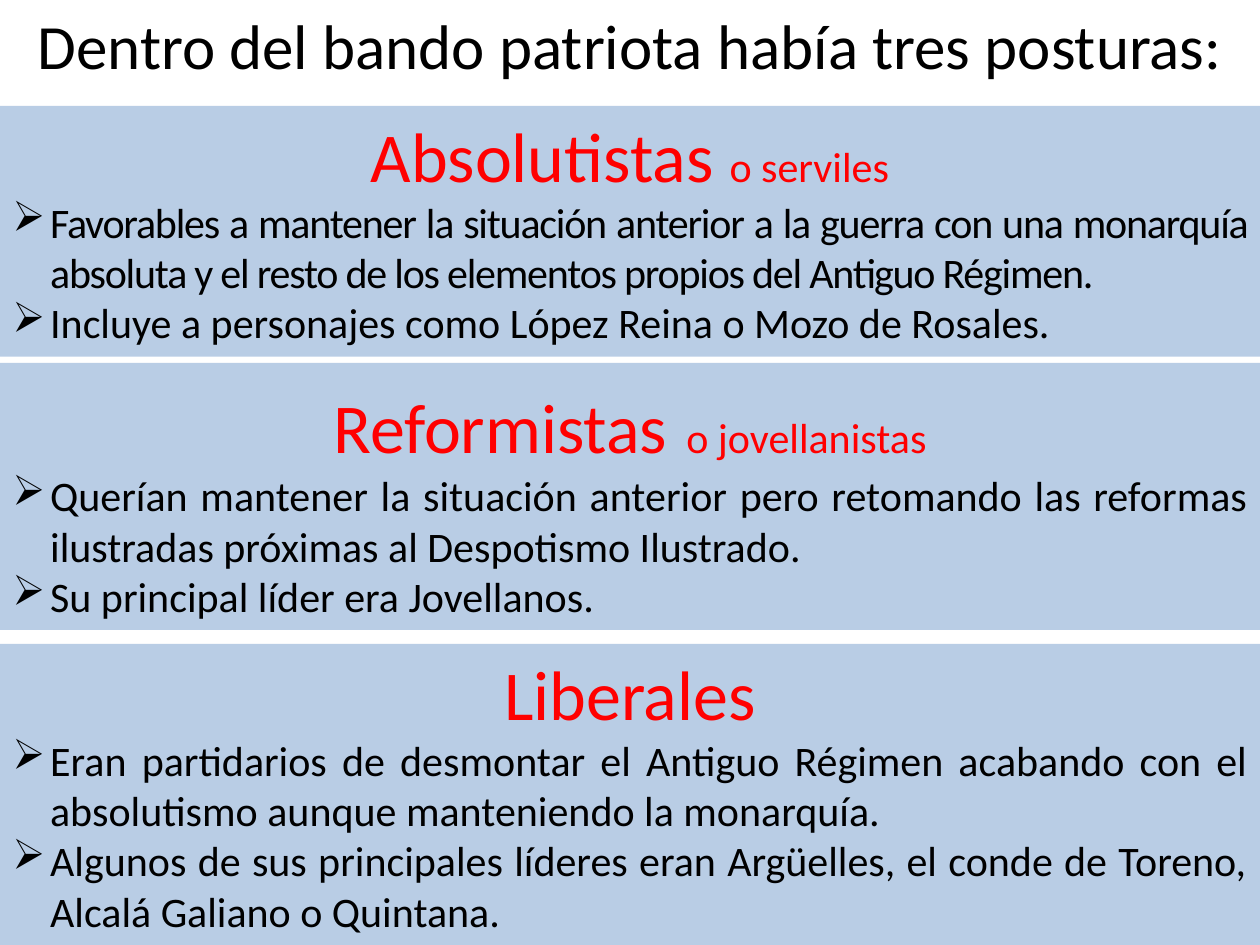
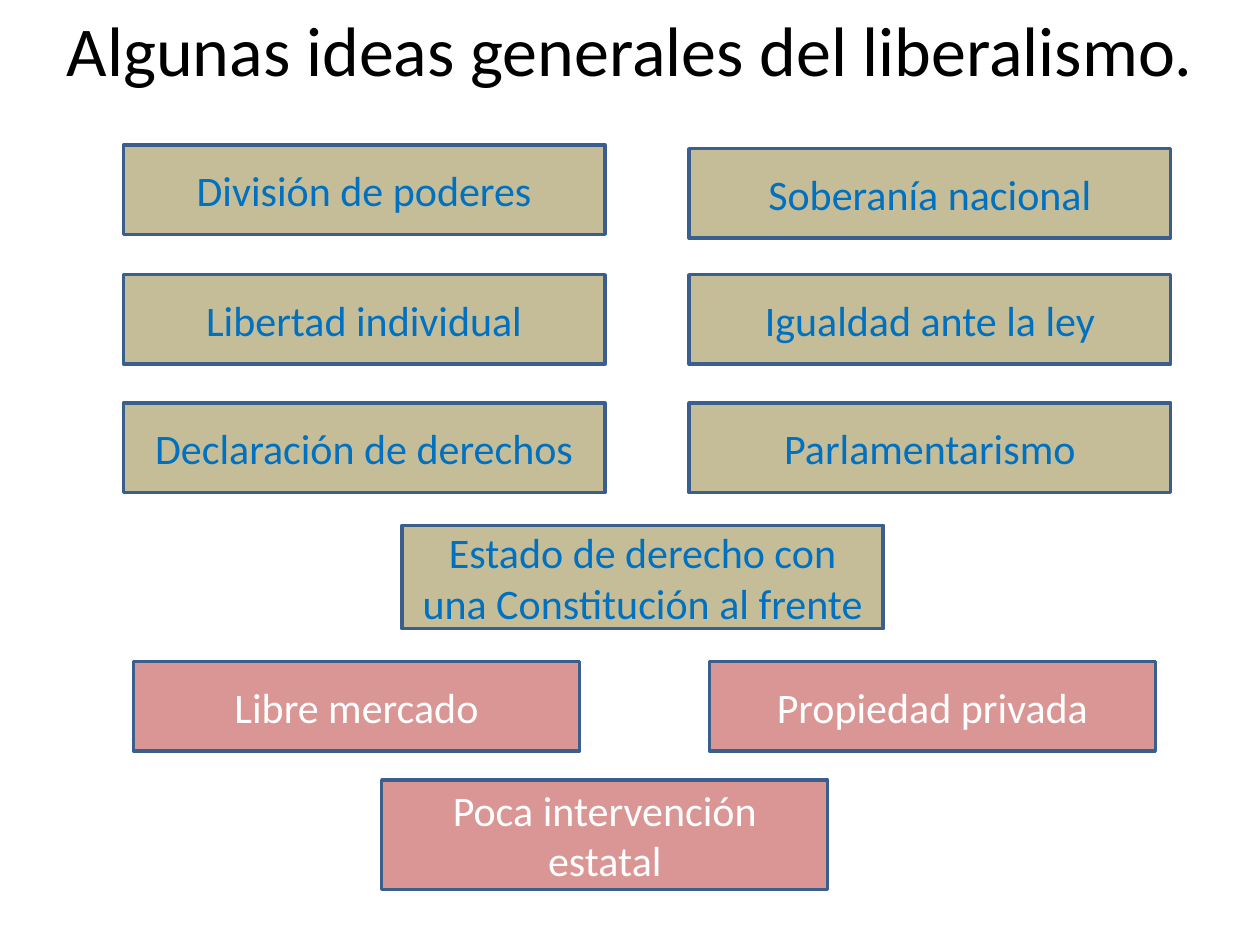
"""Build two slides on the patriot factions and the ideas of liberalism."""
import pptx
import pptx.dml.color
import pptx.enum.shapes
import pptx.enum.text
import pptx.oxml.ns
import pptx.util
from lxml import etree

Inches, Pt = pptx.util.Inches, pptx.util.Pt
RGB = pptx.dml.color.RGBColor
ALIGN = pptx.enum.text.PP_ALIGN
ANCHOR = pptx.enum.text.MSO_ANCHOR
AUTO = pptx.enum.text.MSO_AUTO_SIZE

FONT = "Calibri"
COLORS = {
    "text": "000000", "heading": "FF0000", "band": "B9CDE5",
    "political": "C4BD97", "political_text": "0070C0",
    "economic": "D99694", "economic_text": "FFFFFF", "border": "3A5F8C",
}
SLIDE_W, SLIDE_H = 10, 7.5
BODY_SIZE = 24
INDENT = 0.3

FACTIONS_TITLE = "Dentro del bando patriota había tres posturas:"
FACTIONS = [
    {"top": 0.84, "height": 1.99,
     "heading": [("Absolutistas ", 40), ("o serviles", 24)],
     "points": [
         ("Favorables a mantener la situación anterior a la guerra con una monarquía "
          "absoluta y el resto de los elementos propios del Antiguo Régimen.", -0.7),
         ("Incluye a personajes como López Reina o Mozo de Rosales.", 0)]},
    {"top": 2.88, "height": 2.12,
     "heading": [("Reformistas", 40), (" ", 48), ("o jovellanistas", 24)],
     "points": [
         ("Querían mantener la situación anterior pero retomando las reformas "
          "ilustradas próximas al Despotismo Ilustrado.", 0),
         ("Su principal líder era Jovellanos.", 0)]},
    {"top": 5.11, "height": 2.39,
     "heading": [("Liberales", 40)],
     "points": [
         ("Eran partidarios de desmontar el Antiguo Régimen acabando con el "
          "absolutismo aunque manteniendo la monarquía.", 0),
         ("Algunos de sus principales líderes eran Argüelles, el conde de Toreno, "
          "Alcalá Galiano o Quintana.", 0)]},
]

IDEAS_TITLE = "Algunas ideas generales del liberalismo."
BOX_W = {"political": 3.82, "economic": 3.54}
BOX_H = 0.71
IDEA_ROWS = [
    ("political", BOX_H, [("División de poderes", 0.98, 1.15), ("Soberanía nacional", 5.47, 1.18)]),
    ("political", BOX_H, [("Libertad individual", 0.98, 2.18), ("Igualdad ante la ley", 5.47, 2.18)]),
    ("political", BOX_H, [("Declaración de derechos", 0.98, 3.2), ("Parlamentarismo", 5.47, 3.2)]),
    ("political", 0.82, [("Estado de derecho con una Constitución al frente", 3.19, 4.17)]),
    ("economic", BOX_H, [("Libre mercado", 1.06, 5.25), ("Propiedad privada", 5.63, 5.25)]),
    ("economic", 0.87, [("Poca intervención estatal", 3.03, 6.19)]),
]


def add_run(p, text, size=BODY_SIZE, color="text", spacing=0):
    r = p.add_run()
    r.text = text
    r.font.name = FONT
    r.font.size = Pt(size)
    r.font.color.rgb = RGB.from_string(COLORS[color])
    if spacing:
        r.font._element.set("spc", str(round(spacing * 100)))


def add_bullet(p):
    p.alignment = ALIGN.JUSTIFY
    pPr = p._p.get_or_add_pPr()
    pPr.set("marL", str(Inches(INDENT)))
    pPr.set("indent", str(-Inches(INDENT)))
    etree.SubElement(pPr, pptx.oxml.ns.qn("a:buChar")).set("char", "➢")


def add_title(slide, text, size, height):
    sp = slide.shapes.add_textbox(0, 0, Inches(SLIDE_W), Inches(height))
    tf = sp.text_frame
    tf.word_wrap = True
    tf.auto_size = AUTO.SHAPE_TO_FIT_TEXT
    p = tf.paragraphs[0]
    p.alignment = ALIGN.CENTER
    add_run(p, text, size=size)


def add_rect(slide, left, top, width, height, fill, border=None, anchor=ANCHOR.TOP):
    sp = slide.shapes.add_shape(pptx.enum.shapes.MSO_SHAPE.RECTANGLE,
                                Inches(left), Inches(top), Inches(width), Inches(height))
    sp.shadow.inherit = False
    sp.fill.solid()
    sp.fill.fore_color.rgb = RGB.from_string(COLORS[fill])
    if border:
        sp.line.color.rgb = RGB.from_string(COLORS[border])
        sp.line.width = Pt(2)
    else:
        sp.line.fill.background()
    tf = sp.text_frame
    tf.word_wrap = True
    tf.vertical_anchor = anchor
    tf.paragraphs[0].alignment = ALIGN.CENTER
    return tf


def build_factions(slide):
    add_title(slide, FACTIONS_TITLE, 36, 0.71)
    for faction in FACTIONS:
        tf = add_rect(slide, 0, faction["top"], SLIDE_W, faction["height"], "band")
        tf.auto_size = AUTO.SHAPE_TO_FIT_TEXT
        for text, size in faction["heading"]:
            add_run(tf.paragraphs[0], text, size=size, color="heading")
        for text, spacing in faction["points"]:
            p = tf.add_paragraph()
            add_bullet(p)
            add_run(p, text, spacing=spacing)


def build_ideas(slide):
    add_title(slide, IDEAS_TITLE, 40, 0.77)
    for kind, height, boxes in IDEA_ROWS:
        for text, left, top in boxes:
            tf = add_rect(slide, left, top, BOX_W[kind], height, kind,
                          border="border", anchor=ANCHOR.MIDDLE)
            add_run(tf.paragraphs[0], text, color=kind + "_text")


def main():
    prs = pptx.Presentation()
    prs.slide_width, prs.slide_height = Inches(SLIDE_W), Inches(SLIDE_H)
    for build in (build_factions, build_ideas):
        build(prs.slides.add_slide(prs.slide_layouts[6]))
    prs.save("out.pptx")


if __name__ == "__main__":
    main()
